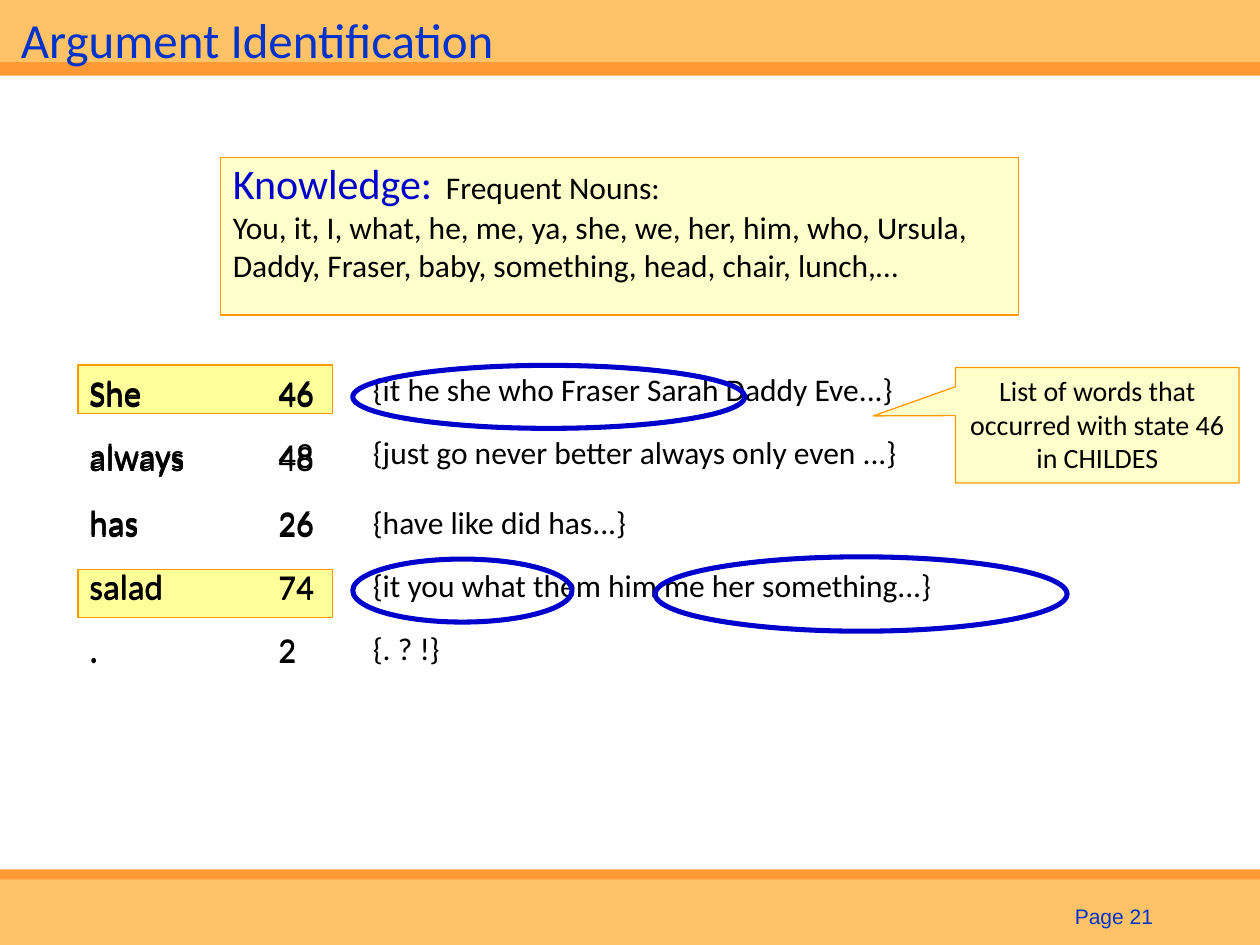
from lxml.etree import SubElement
from pptx import Presentation
from pptx.dml.color import RGBColor
from pptx.enum.shapes import MSO_SHAPE
from pptx.enum.text import MSO_ANCHOR, PP_ALIGN
from pptx.oxml.ns import qn
from pptx.util import Pt

ORANGE = RGBColor(0xFF, 0x99, 0x33)
LIGHT_ORANGE = RGBColor(0xFF, 0xC2, 0x66)
BORDER = RGBColor(0xFF, 0x99, 0x00)
YELLOW = RGBColor(0xFF, 0xFF, 0x99)
CREAM = RGBColor(0xFF, 0xFF, 0xCC)
TITLE_BLUE = RGBColor(0x00, 0x33, 0xCC)
BLUE = RGBColor(0x00, 0x00, 0xCC)
BLACK = RGBColor(0, 0, 0)
WHITE = RGBColor(0xFF, 0xFF, 0xFF)
NO_STYLE = "{2D5ABB26-0587-4C30-8999-92F81FD0307C}"

# Content
TITLE = "Argument Identification"
PAGE = "Page 21"
KNOWLEDGE = ("Knowledge:", "\tFrequent Nouns:")
NOUNS = ["You, it, I, what, he, me, ya, she, we, her, him, who, Ursula,",
         "Daddy, Fraser, baby, something, head, chair, lunch,…"]
NOTE = "List of words that occurred with state 46 in CHILDES"
STATES = [
    ("She", "46", "{it he she who Fraser Sarah Daddy Eve...}"),
    ("always", "48", "{just go never better always only even ...}"),
    ("has", "26", "{have like did has...}"),
    ("salad", "74", "{it you what them him me her something...}"),
    (".", "2", "{. ? !}"),
]

# Places: left, top, width, height
BANDS = [(0, 496.8, 720, 43.2, ORANGE), (0, 0, 720, 43.2, ORANGE),
         (0, 0, 720, 35.5, LIGHT_ORANGE), (0, 502.5, 720, 37.5, LIGHT_ORANGE)]
HIGHLIGHTS = [(44.5, 325.4, 145.5, 27.7), (44.5, 208.6, 145.5, 27.7)]
ELLIPSES = [(201.6, 208.8, 224, 36), (201.6, 319.5, 125.3, 36),
            (374.4, 318.2, 235.4, 42.5)]
EVEN_ROWS = [36.5] * 4 + [41]
# Stacked tables: top, column widths, row heights
TABLES = [(207.4, [108, 54, 479.5], [36, 39.6, 36, 36, 40.3]),
          (208.8, [108, 58.3], EVEN_ROWS),
          (208.8, [108], EVEN_ROWS)]

prs = Presentation()
prs.slide_width, prs.slide_height = Pt(720), Pt(540)
slide = prs.slides.add_slide(prs.slide_layouts[6])


def add_shape(kind, box, fill=None, line=None, width=0.75):
    s = slide.shapes.add_shape(kind, *map(Pt, box))
    s.shadow.inherit = False
    if fill is None:
        s.fill.background()
    else:
        s.fill.solid()
        s.fill.fore_color.rgb = fill
    if line is None:
        s.line.fill.background()
    else:
        s.line.color.rgb = line
        s.line.width = Pt(width)
    return s


def set_font(font, size, color=BLACK, name="Calibri"):
    font.size, font.name, font.color.rgb = Pt(size), name, color


def add_label(text, box, size, color, name, anchor, align, insets=None):
    tf = slide.shapes.add_textbox(*map(Pt, box)).text_frame
    tf.word_wrap = True
    tf.vertical_anchor = anchor
    if insets:
        (tf.margin_left, tf.margin_top,
         tf.margin_right, tf.margin_bottom) = map(Pt, insets)
    p = tf.paragraphs[0]
    p.text, p.alignment = text, align
    set_font(p.font, size, color, name)


def add_state_table(top, widths, heights):
    frame = slide.shapes.add_table(len(heights), len(widths), Pt(44.6), Pt(top),
                                   Pt(sum(widths)), Pt(sum(heights)))
    table = frame.table
    table.first_row = table.horz_banding = False
    next(frame.element.iter(qn("a:tableStyleId"))).text = NO_STYLE
    for column, width in zip(table.columns, widths):
        column.width = Pt(width)
    for row, height, words in zip(table.rows, heights, STATES):
        row.height = Pt(height)
        for i, (cell, text) in enumerate(zip(row.cells, words)):
            cell.fill.background()
            cell.margin_left = cell.margin_right = Pt(6.5)
            cell.margin_top, cell.margin_bottom = Pt(5), Pt(3.6)
            p = cell.text_frame.paragraphs[0]
            p.text = text
            set_font(p.font, 18 if i == 2 else 20)
    return table


# Header and footer bands, page number, title
for *box, color in BANDS:
    add_shape(MSO_SHAPE.RECTANGLE, box, color)
add_label(PAGE, (594, 516.2, 72, 18), 12, TITLE_BLUE, "Arial",
          MSO_ANCHOR.BOTTOM, PP_ALIGN.RIGHT)
add_label(TITLE, (12, -0.5, 648, 42), 28, TITLE_BLUE, "Calibri",
          MSO_ANCHOR.MIDDLE, PP_ALIGN.LEFT, (0, 3, 0, 0))

# Highlighted rows and the tables over them
for box in HIGHLIGHTS:
    add_shape(MSO_SHAPE.RECTANGLE, box, YELLOW, BORDER)
full_table, *_ = [add_state_table(*t) for t in TABLES]
first_list = full_table.cell(0, 2)
first_list.fill.solid()
first_list.fill.fore_color.rgb = WHITE

# Rings around known nouns
for box in ELLIPSES:
    add_shape(MSO_SHAPE.OVAL, box, line=BLUE, width=2.89)

# Knowledge box
s = add_shape(MSO_SHAPE.RECTANGLE, (126, 90, 456, 90), CREAM, BORDER)
tf = s.text_frame
tf.word_wrap = False
tf.vertical_anchor = MSO_ANCHOR.TOP
tf.margin_top = 0
p = tf.paragraphs[0]
tabs = SubElement(p._p.get_or_add_pPr(), qn("a:tabLst"))
SubElement(tabs, qn("a:tab"), pos=str(Pt(121.7)), algn="l")
for text, size, color in zip(KNOWLEDGE, (24, 18), (BLUE, BLACK)):
    r = p.add_run()
    r.text = text
    set_font(r.font, size, color)
for line in NOUNS:
    p = tf.add_paragraph()
    p.text = line
    set_font(p.font, 18)
for p in tf.paragraphs:
    p.alignment = PP_ALIGN.LEFT

# Callout on the first word list
s = add_shape(MSO_SHAPE.RECTANGULAR_CALLOUT, (546, 210, 162, 66), CREAM, BORDER)
s.adjustments[0], s.adjustments[1] = -0.79, -0.08
tf = s.text_frame
tf.word_wrap = True
tf.vertical_anchor = MSO_ANCHOR.TOP
p = tf.paragraphs[0]
p.text, p.alignment = NOTE, PP_ALIGN.CENTER
set_font(p.font, 16)

prs.save("out.pptx")
